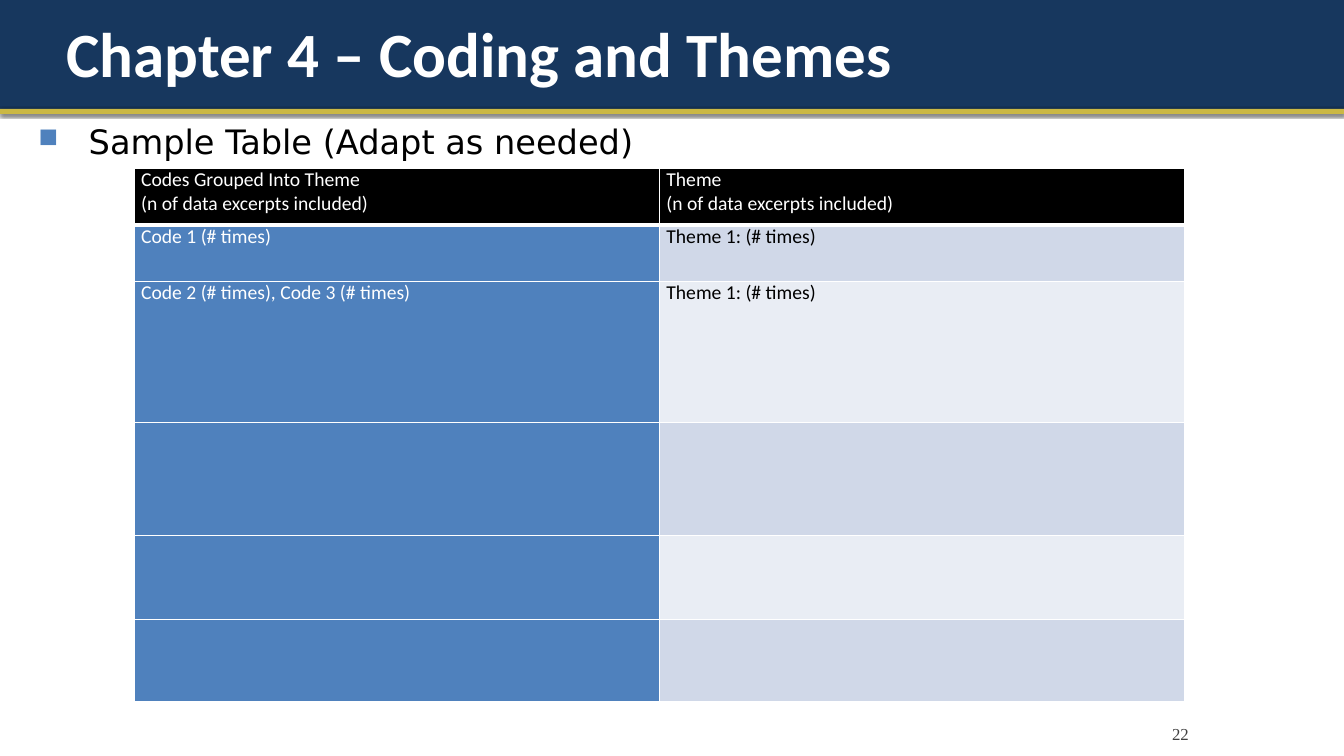
"""Build the coding and themes slide with its sample table."""
from lxml import etree
from pptx import Presentation, util as u
from pptx.dml.color import RGBColor
from pptx.enum import shapes, text
from pptx.oxml import parse_xml
from pptx.oxml.ns import nsdecls, qn

THEME = {
    "navy": "17375E", "gold": "CBB845", "white": "FFFFFF", "black": "000000",
    "blue": "4F81BD", "bands": ("E9EDF4", "D0D8E8"), "grey": "3F3F3F",
    "title": 45, "body": 24, "cell": 14, "number": 12,
    "sans": "Calibri", "wide": "DejaVu Sans", "serif": "Times New Roman",
}
W, H = 13.33, 7.5


def add_run(p, words, size, font, color, bold=False):
    r = p.add_run()
    r.text = words
    r.font.size, r.font.name, r.font.bold = u.Pt(size), font, bold
    r.font.color.rgb = RGBColor.from_string(color)


def add_box(left, top, width, height, insets, anchor):
    tf = s.shapes.add_textbox(*map(u.Inches, (left, top, width, height))).text_frame
    tf.word_wrap = True
    tf.vertical_anchor = anchor
    tf.margin_left, tf.margin_top, tf.margin_right, tf.margin_bottom = map(u.Inches, insets)
    return tf.paragraphs[0]


prs = Presentation()
prs.slide_width, prs.slide_height = u.Inches(W), u.Inches(H)
s = prs.slides.add_slide(prs.slide_layouts[6])

for top, height, color in ((0, 1.08, THEME["navy"]), (1.08, 0.05, THEME["gold"])):
    sp = s.shapes.add_shape(shapes.MSO_SHAPE.RECTANGLE, 0, u.Inches(top), prs.slide_width, u.Inches(height))
    sp.shadow.inherit = False
    sp.fill.solid()
    sp.fill.fore_color.rgb = RGBColor.from_string(color)
    sp.line.fill.background()
effects = sp._element.spPr.find(qn("a:effectLst"))
effects.append(parse_xml(
    f'<a:outerShdw {nsdecls("a")} blurRad="{u.Pt(2.5)}" dist="{u.Pt(0.8)}" dir="5400000" rotWithShape="0">'
    f'<a:srgbClr val="{THEME["black"]}"><a:alpha val="60000"/></a:srgbClr></a:outerShdw>'))

p = add_box(0.56, 0, 12, 1.04, (0.1, 0.05, 0.05, 0.05), text.MSO_ANCHOR.MIDDLE)
add_run(p, "Chapter 4 – Coding and Themes", THEME["title"], THEME["sans"], THEME["white"], True)

p = add_box(0.14, 1.1, 11.08, 5.3, (0.06, 0.1, 0.1, 0.05), text.MSO_ANCHOR.TOP)
pPr = p._p.get_or_add_pPr()
pPr.set("marL", str(u.Inches(0.68)))
pPr.set("indent", str(u.Inches(-0.5)))
color = etree.SubElement(pPr, qn("a:buClr"))
etree.SubElement(color, qn("a:srgbClr"), val=THEME["blue"])
etree.SubElement(pPr, qn("a:buSzPct"), val="80000")
etree.SubElement(pPr, qn("a:buChar"), char="■")
add_run(p, "Sample Table (Adapt as needed)", THEME["body"], THEME["wide"], THEME["black"])

p = add_box(10.78, 7.08, 1.11, 0.3, (0.1, 0.05, 0.1, 0), text.MSO_ANCHOR.BOTTOM)
p.alignment = text.PP_ALIGN.RIGHT
add_run(p, "22", THEME["number"], THEME["serif"], THEME["grey"])

row_heights = (0.56, 0.56, 1.4, 1.12, 0.84, 0.81)
count = "(n of data excerpts included)"
entries = {
    (0, 0): ("Codes Grouped Into Theme", count), (0, 1): ("Theme", count),
    (1, 0): ("Code 1 (# times)",), (1, 1): ("Theme 1: (# times)",),
    (2, 0): ("Code 2 (# times), Code 3 (# times)",), (2, 1): ("Theme 1: (# times)",),
}
table = s.shapes.add_table(len(row_heights), 2, *map(u.Inches, (1.33, 1.67, 10.42, sum(row_heights)))).table
for column in table.columns:
    column.width = u.Inches(5.21)
for row, height in enumerate(row_heights):
    table.rows[row].height = u.Inches(height)
    for col in range(2):
        cell = table.cell(row, col)
        cell.margin_left = cell.margin_right = u.Inches(0.07)
        cell.margin_top = cell.margin_bottom = 0
        fill = THEME["black"] if row == 0 else THEME["bands"][row % 2] if col else THEME["blue"]
        cell.fill.solid()
        cell.fill.fore_color.rgb = RGBColor.from_string(fill)
        ink = THEME["black"] if row and col else THEME["white"]
        tf = cell.text_frame
        for i, words in enumerate(entries.get((row, col), ())):
            p = tf.add_paragraph() if i else tf.paragraphs[0]
            add_run(p, words, THEME["cell"], THEME["sans"], ink)
        tcPr = cell._tc.get_or_add_tcPr()
        for i, side in enumerate("LRTB"):
            width = 3 if (row, side) in ((0, "B"), (1, "T")) else 1
            tcPr.insert(i, parse_xml(
                f'<a:ln{side} {nsdecls("a")} w="{u.Pt(width)}"><a:solidFill>'
                f'<a:srgbClr val="{THEME["white"]}"/></a:solidFill></a:ln{side}>'))

prs.save("out.pptx")
